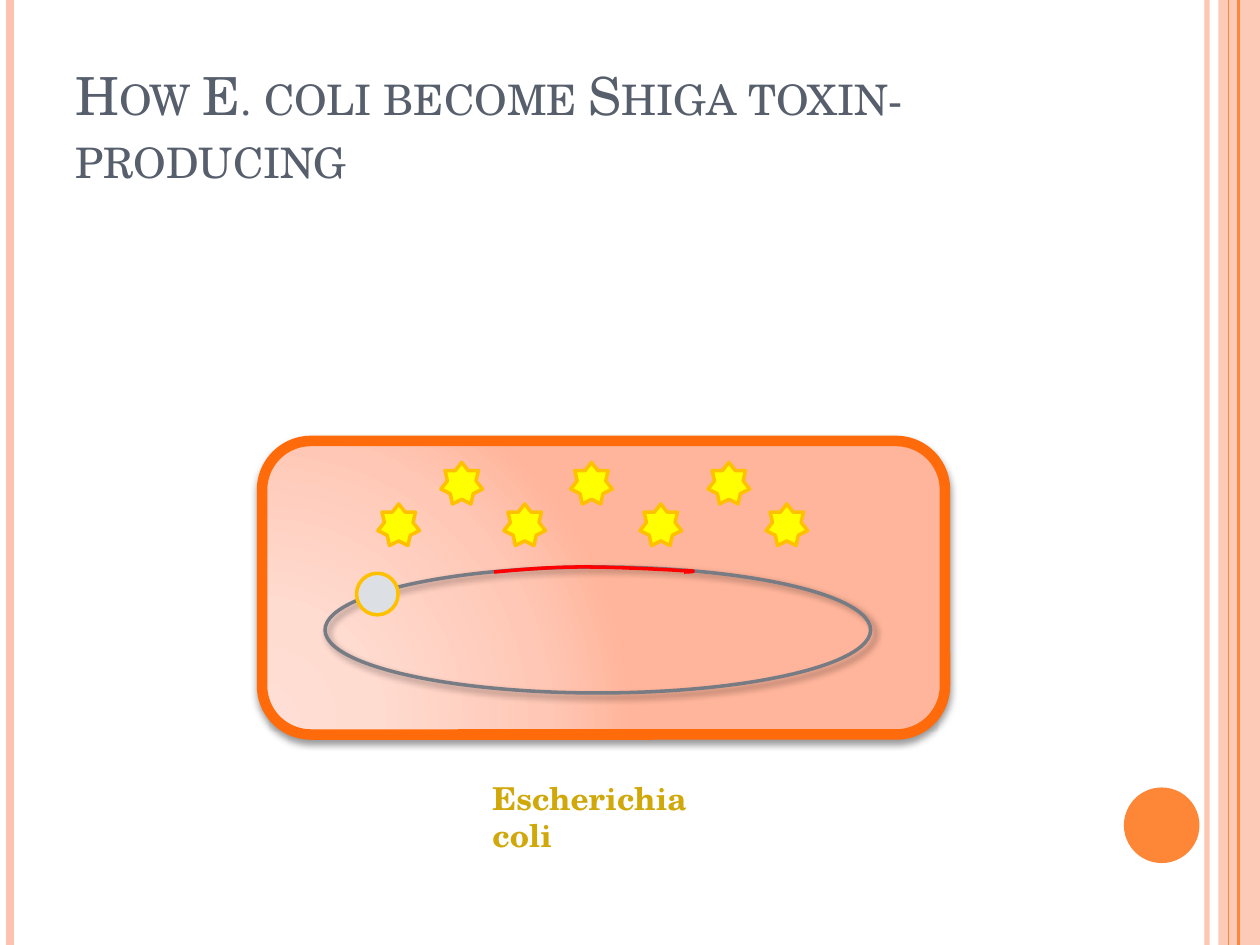
from pptx import Presentation, oxml
from pptx.dml.color import RGBColor
from pptx.enum import shapes, text
from pptx.oxml import ns
from pptx.util import Inches, Pt

COLORS = {
    "peach": "FEC3AE", "orange": "FE8637", "title": "575F6D", "membrane": "FF6B0A",
    "chromosome": "777C84", "label": "D0A80A", "gene": "FF0000", "receptor": "DCDFE3",
    "gold": "FFC000", "toxin": "FFFF00", "shadow": "000000",
    "cell 1": "FFDED5", "cell 2": "FFDBD0", "cell 3": "FFC8B6", "cell 4": "FFB59B",
}
FONT = "TeX Gyre Schola"
KIND = shapes.MSO_SHAPE

presentation = Presentation()
presentation.slide_width, presentation.slide_height = Inches(10), Inches(7.5)
slide = presentation.slides.add_slide(presentation.slide_layouts[6])


def style(shape, fill=None, line=None, weight=1, shadow=None):
    """Set fill, outline and an optional (distance, angle) shadow."""
    shape.shadow.inherit = False
    if fill:
        shape.fill.solid()
        shape.fill.fore_color.rgb = RGBColor.from_string(COLORS[fill])
    else:
        shape.fill.background()
    if line:
        shape.line.color.rgb = RGBColor.from_string(COLORS[line])
        shape.line.width = Pt(weight)
    else:
        shape.line.fill.background()
    if shadow:
        distance, angle = shadow
        effects = shape._element.spPr.find(ns.qn("a:effectLst"))
        effects.append(oxml.parse_xml(
            f'<a:outerShdw {ns.nsdecls("a")} blurRad="{Pt(4)}" dist="{Pt(distance)}" '
            f'dir="{angle * 60000}" rotWithShape="0"><a:srgbClr val="{COLORS["shadow"]}">'
            '<a:alpha val="40000"/></a:srgbClr></a:outerShdw>'))


def add_shape(kind, left, top, width, height, **look):
    shape = slide.shapes.add_shape(
        kind, Inches(left), Inches(top), Inches(width), Inches(height))
    style(shape, **look)
    return shape


# Side bands
side_band = add_shape(KIND.RECTANGLE, 9.67, 0, 0.33, 7.5, fill="peach")
translucent = [(side_band, 87)]
for x, color, weight in [(9.58, "peach", 3), (0.08, "peach", 4.5),
                         (9.83, "orange", 1.5), (9.75, "orange", 0.75)]:
    rule = slide.shapes.add_connector(
        shapes.MSO_CONNECTOR.STRAIGHT, Inches(x), 0, Inches(x), Inches(7.5))
    rule.line.color.rgb = RGBColor.from_string(COLORS[color])
    rule.line.width = Pt(weight)
    rule._element.spPr.append(oxml.parse_xml(f'<a:effectLst {ns.nsdecls("a")}/>'))
    if x == 9.58:
        translucent.append((rule, 93))
for shape, opacity in translucent:
    color_element = next(shape._element.spPr.iter(ns.qn("a:srgbClr")))
    color_element.append(oxml.parse_xml(
        f'<a:alpha {ns.nsdecls("a")} val="{opacity * 1000}"/>'))
add_shape(KIND.OVAL, 8.92, 6.25, 0.6, 0.6, fill="orange")

# Bacterium and its chromosome
cell = add_shape(KIND.ROUNDED_RECTANGLE, 2.08, 3.5, 5.42, 2.33,
                 line="membrane", weight=6, shadow=(2, 90))
stops = "".join(
    f'<a:gs pos="{position * 1000}"><a:srgbClr val="{COLORS[color]}"/></a:gs>'
    for position, color in [(0, "cell 1"), (30, "cell 2"), (75, "cell 3"), (100, "cell 4")])
cell_properties = cell._element.spPr
cell_properties.replace(cell_properties.find(ns.qn("a:noFill")), oxml.parse_xml(
    f'<a:gradFill {ns.nsdecls("a")} rotWithShape="1"><a:gsLst>{stops}</a:gsLst>'
    '<a:path path="circle"><a:fillToRect l="5000" t="100000" r="120000" b="10000"/>'
    '</a:path></a:gradFill>'))
add_shape(KIND.OVAL, 2.58, 4.5, 4.33, 1, line="chromosome", weight=2, shadow=(3, 45))

# Toxin gene, traced along three Bezier curves
gene_start = (3.92, 4.54)
gene_curves = [
    [(4.15, 4.52), (4.38, 4.5), (4.63, 4.5)],
    [(4.88, 4.5), (5.29, 4.52), (5.42, 4.53)],
    [(5.56, 4.53), (5.49, 4.54), (5.43, 4.54)],
]
points = []
start = gene_start
for curve in gene_curves:
    for step in range(1, 13):
        t = step / 12
        weights = [(1 - t) ** 3, 3 * t * (1 - t) ** 2, 3 * t ** 2 * (1 - t), t ** 3]
        points.append(tuple(
            Inches(sum(share * point[axis] for share, point in zip(weights, [start, *curve])))
            for axis in (0, 1)))
    start = curve[-1]
builder = slide.shapes.build_freeform(*(Inches(value) for value in gene_start))
builder.add_line_segments(points, close=False)
style(builder.convert_to_shape(), line="gene", weight=2)

# Receptor and toxins, the toxins alternating between two rows
add_shape(KIND.OVAL, 2.83, 4.55, 0.33, 0.33, fill="receptor", line="gold", weight=2)
for index, left in enumerate([3, 3.5, 4, 4.53, 5.08, 5.62, 6.08]):
    add_shape(KIND.STAR_7_POINT, left, 3.67 if index % 2 else 4, 0.33, 0.33,
              fill="toxin", line="gold", weight=2)

# Title and label
for words, box, anchor, size, color, bold in [
    ("How E. coli become Shiga toxin-producing", (0.5, 0.3, 8.17, 1.25),
     text.MSO_ANCHOR.BOTTOM, 30, "title", False),
    ("Escherichia coli", (3.81, 6.13, 2.12, 0.4), text.MSO_ANCHOR.TOP, 18, "label", True),
]:
    text_frame = slide.shapes.add_textbox(*(Inches(value) for value in box)).text_frame
    text_frame.word_wrap = True
    text_frame.vertical_anchor = anchor
    text_frame.text = words
    run = text_frame.paragraphs[0].runs[0]
    run.font.name, run.font.size, run.font.bold = FONT, Pt(size), bold
    run.font.color.rgb = RGBColor.from_string(COLORS[color])
    if color == "title":
        run._r.get_or_add_rPr().set("cap", "small")

presentation.save("out.pptx")
